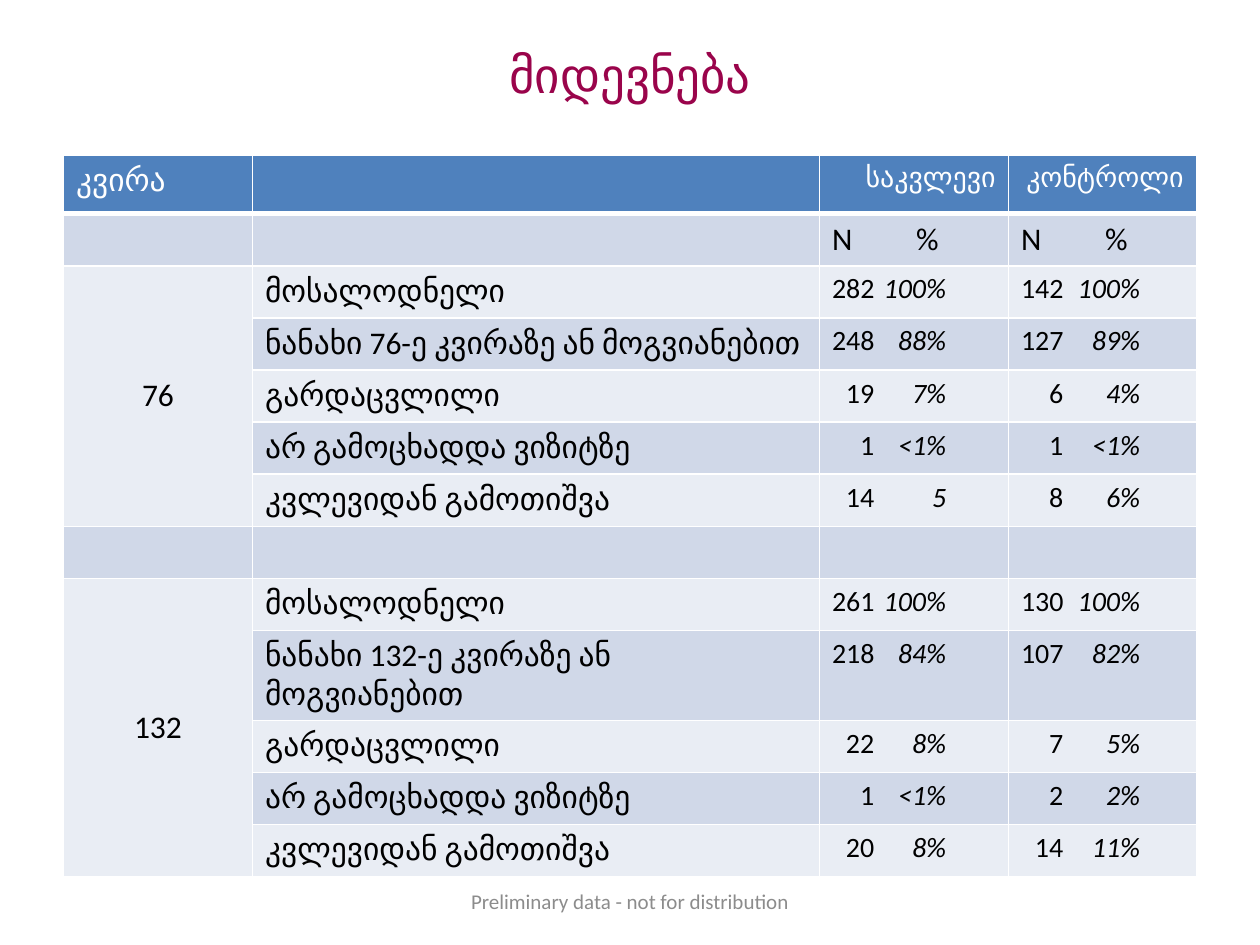
import pptx
import pptx.dml.color
import pptx.enum.text
import pptx.oxml
import pptx.oxml.ns
import pptx.util
from pptx.util import Cm

ALIGN = pptx.enum.text.PP_ALIGN
ANCHOR = pptx.enum.text.MSO_ANCHOR
NAMESPACE = pptx.oxml.ns.nsdecls("a")
HEADER_FILL, BAND_FILLS = "4F81BD", ("E9EDF4", "D0D8E8")

COLUMN_WIDTHS = (3.81, 11.43, 3.81, 3.79)
HEADER_HEIGHT, ROW_HEIGHT, WRAPPED_HEIGHT = 1.19, 1.05, 1.81
COUNT_TAB = 0.85
PERCENT_TABS = (2.3, 2.4)

OUTCOMES = ("მოსალოდნელი", "ნანახი {}-ე კვირაზე ან მოგვიანებით", "გარდაცვლილი",
            "არ გამოცხადდა ვიზიტზე", "კვლევიდან გამოთიშვა")
WEEKS = {
    "76": ((("282", "100%"), ("142", "100%")),
           (("248", "88%"), ("127", "89%")),
           (("19", "7%"), ("6", "4%")),
           (("1", "<1%"), ("1", "<1%")),
           (("14", "5"), ("8", "6%"))),
    "132": ((("261", "100%"), ("130", "100%")),
            (("218", "84%"), ("107", "82%")),
            (("22", "8%"), ("7", "5%")),
            (("1", "<1%"), ("2", "2%")),
            (("20", "8%"), ("14", "11%"))),
}


def color(hex_code):
    return pptx.dml.color.RGBColor.from_string(hex_code)


def write(paragraph, text, size=18, ink="000000", italic=False, align=ALIGN.LEFT):
    paragraph.alignment = align
    run = paragraph.add_run()
    run.text = text
    run.font.name = "Calibri"
    run.font.size = pptx.util.Pt(size)
    run.font.bold = False
    run.font.italic = italic
    run.font.color.rgb = color(ink)


def set_tabs(paragraph, stops):
    tabs = "".join(f'<a:tab pos="{Cm(stop)}" algn="r"/>' for stop in stops)
    paragraph._p.get_or_add_pPr().append(
        pptx.oxml.parse_xml(f"<a:tabLst {NAMESPACE}>{tabs}</a:tabLst>"))


def style_cell(cell, fill, bottom_width=1):
    properties = cell._tc.get_or_add_tcPr()
    for side, width in (("L", 1), ("R", 1), ("T", 1), ("B", bottom_width)):
        properties.append(pptx.oxml.parse_xml(
            f'<a:ln{side} {NAMESPACE} w="{pptx.util.Pt(width)}"><a:solidFill>'
            f'<a:srgbClr val="FFFFFF"/></a:solidFill></a:ln{side}>'))
    cell.fill.solid()
    cell.fill.fore_color.rgb = color(fill)


def write_result(cell, count, percent, percent_tab):
    paragraph = cell.text_frame.paragraphs[0]
    write(paragraph, f"\t{count}\t", size=16)
    write(paragraph, percent, size=16, italic=True)
    set_tabs(paragraph, (COUNT_TAB, percent_tab))


def fill_week(table, first_row, week, results):
    week_cell = table.cell(first_row, 0)
    week_cell.merge(table.cell(first_row + len(OUTCOMES) - 1, 0))
    week_cell.vertical_anchor = ANCHOR.MIDDLE
    write(week_cell.text_frame.paragraphs[0], week, align=ALIGN.CENTER)
    for row, (outcome, arms) in enumerate(zip(OUTCOMES, results), first_row):
        write(table.cell(row, 1).text_frame.paragraphs[0], outcome.format(week))
        for column, ((count, percent), tab) in enumerate(zip(arms, PERCENT_TABS), 2):
            write_result(table.cell(row, column), count, percent, tab)


def add_followup_table(slide, left, top):
    heights = [HEADER_HEIGHT] + [ROW_HEIGHT] * 12
    heights[9] = WRAPPED_HEIGHT
    table = slide.shapes.add_table(
        len(heights), len(COLUMN_WIDTHS), Cm(left), Cm(top),
        Cm(sum(COLUMN_WIDTHS)), Cm(sum(heights))).table
    for column, width in zip(table.columns, COLUMN_WIDTHS):
        column.width = Cm(width)
    for index, (row, height) in enumerate(zip(table.rows, heights)):
        row.height = Cm(height)
        for cell in row.cells:
            if index == 0:
                style_cell(cell, HEADER_FILL, bottom_width=3)
            else:
                style_cell(cell, BAND_FILLS[index % 2])

    write(table.cell(0, 0).text_frame.paragraphs[0], "კვირა", ink="FFFFFF")
    for column, arm in enumerate(("საკვლევი", "კონტროლი"), 2):
        write(table.cell(0, column).text_frame.paragraphs[0], arm,
              size=16, ink="FFFFFF", align=ALIGN.RIGHT)
        units = table.cell(1, column).text_frame.paragraphs[0]
        write(units, "N\t%")
        set_tabs(units, (2.15,))
    for first_row, (week, results) in zip((2, 8), WEEKS.items()):
        fill_week(table, first_row, week, results)


def add_title(slide, left, top, width, height):
    title = slide.shapes.title
    title.left, title.top, title.width, title.height = map(Cm, (left, top, width, height))
    title.text_frame.vertical_anchor = ANCHOR.TOP
    write(title.text_frame.paragraphs[0], "მიდევნება", size=28, ink="9A044B",
          align=ALIGN.CENTER)


def add_footer(slide, left, top, width, height):
    footer = slide.shapes.add_textbox(*map(Cm, (left, top, width, height)))
    footer.text_frame.word_wrap = True
    footer.text_frame.vertical_anchor = ANCHOR.MIDDLE
    write(footer.text_frame.paragraphs[0], "Preliminary data - not for distribution",
          size=12, ink="8C8C8C", align=ALIGN.CENTER)


def main():
    presentation = pptx.Presentation()
    presentation.slide_width, presentation.slide_height = Cm(25.4), Cm(19.05)
    slide = presentation.slides.add_slide(presentation.slide_layouts[5])
    add_title(slide, 1.27, 0.76, 22.86, 3.18)
    add_followup_table(slide, 1.28, 3.12)
    add_footer(slide, 8.68, 17.66, 8.04, 1.01)
    presentation.save("out.pptx")


if __name__ == "__main__":
    main()
